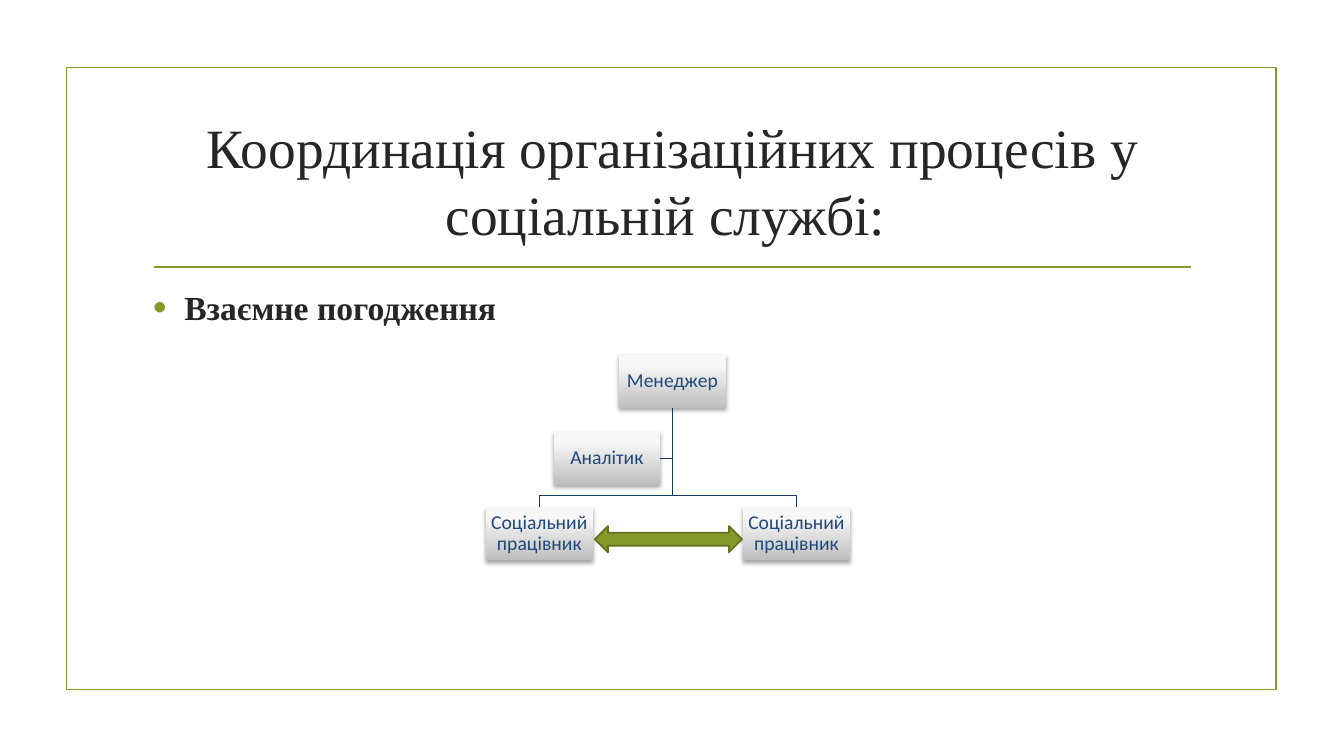
from lxml.etree import SubElement
from pptx import Presentation
from pptx.dml.color import RGBColor
from pptx.enum.shapes import MSO_CONNECTOR, MSO_SHAPE
from pptx.enum.text import MSO_ANCHOR, PP_ALIGN
from pptx.oxml import parse_xml
from pptx.oxml.ns import nsdecls, qn
from pptx.util import Inches, Pt

GREEN, NAVY, DARK = "83992A", "193A64", "262626"
SERIF = "Times New Roman"


def paint(color, code):
    color.rgb = RGBColor.from_string(code)


def write(par, text, size, face, code, bold=False):
    run = par.add_run()
    run.text = text
    run.font.size, run.font.name, run.font.bold = Pt(size), face, bold
    paint(run.font.color, code)


deck = Presentation()
deck.slide_width, deck.slide_height = Inches(13.33), Inches(7.5)
slide = deck.slides.add_slide(deck.slide_layouts[6])
shapes = slide.shapes

# Frame and rule under the title
frame = shapes.add_shape(MSO_SHAPE.RECTANGLE, Inches(0.66), Inches(0.67),
                         Inches(12), Inches(6.17))
frame.shadow.inherit = False
frame.fill.background()
rule = shapes.add_connector(MSO_CONNECTOR.STRAIGHT, Inches(1.53), Inches(2.65),
                            Inches(11.81), Inches(2.65))
SubElement(rule._element.spPr, qn("a:effectLst"))
for item in (frame, rule):
    paint(item.line.color, GREEN)
    item.line.width = Pt(1.25)

# Title
title = shapes.add_textbox(Inches(1.42), Inches(1.07), Inches(10.5), Inches(1.43))
title.text_frame.word_wrap = True
title.text_frame.vertical_anchor = MSO_ANCHOR.MIDDLE
par = title.text_frame.paragraphs[0]
par.alignment = PP_ALIGN.CENTER
write(par, "Координація організаційних процесів у соціальній службі: ", 39.6, SERIF, DARK)

# Bullet
body = shapes.add_textbox(Inches(1.42), Inches(2.8), Inches(10.5), Inches(3.63))
body.text_frame.word_wrap = True
par = body.text_frame.paragraphs[0]
props = par._p.get_or_add_pPr()
props.set("marL", str(Inches(0.31)))
props.set("indent", str(-Inches(0.31)))
tint = SubElement(props, qn("a:buClr"))
SubElement(tint, qn("a:srgbClr"), val=GREEN)
SubElement(props, qn("a:buSzPct"), val="115000")
SubElement(props, qn("a:buFont"), typeface="Arial")
SubElement(props, qn("a:buChar"), char="•")
par.space_after = Pt(6)
write(par, "Взаємне погодження", 24, SERIF, DARK, True)

# Chart grid: box size, axis of the tree and row tops
WIDE, HIGH, AXIS = 1.06, 0.53, 6.67
TOP, MID, LOW = 3.52, 4.28, 5.03
LEFT, RIGHT = 5.35, 7.9
BASE, FORK = TOP + HIGH, 4.92

# Branches of the tree
side = MID + HIGH / 2
for bends in ([(AXIS, side), (AXIS - 0.12, side)],
              [(AXIS, FORK), (RIGHT, FORK), (RIGHT, LOW)],
              [(AXIS, FORK), (LEFT, FORK), (LEFT, LOW)]):
    path = shapes.build_freeform(Inches(AXIS), Inches(BASE))
    path.add_line_segments([(Inches(x), Inches(y)) for x, y in bends], close=False)
    branch = path.convert_to_shape()
    branch.shadow.inherit = False
    branch.fill.background()
    paint(branch.line.color, NAVY)
    branch.line.width = Pt(0.75)

# Boxes, each placed by its centre and top
for mid, top, text in ((AXIS, TOP, "Менеджер"),
                       (LEFT, LOW, "Соціальний працівник"),
                       (RIGHT, LOW, "Соціальний працівник"),
                       (6.02, MID, "Аналітик")):
    box = shapes.add_shape(MSO_SHAPE.RECTANGLE, Inches(mid - WIDE / 2), Inches(top),
                           Inches(WIDE), Inches(HIGH))
    box.line.fill.background()
    box.fill.gradient()
    box.fill.gradient_angle = 90
    for stop, place, code in zip(box.fill.gradient_stops, (0, 0.8), ("BEBEBE", "F7F7F7")):
        stop.position = place
        paint(stop.color, code)
    box._element.spPr.append(parse_xml(
        f'<a:effectLst {nsdecls("a")}><a:outerShdw blurRad="{Pt(3.1)}" dist="{Pt(1.8)}" '
        'dir="5400000" rotWithShape="0"><a:srgbClr val="000000"><a:alpha val="35000"/>'
        '</a:srgbClr></a:outerShdw></a:effectLst>'))
    area = box.text_frame
    area.word_wrap = True
    area.vertical_anchor = MSO_ANCHOR.MIDDLE
    area.margin_left = area.margin_right = Inches(0.01)
    area.margin_top = area.margin_bottom = Inches(0.01)
    par = area.paragraphs[0]
    par.alignment = PP_ALIGN.CENTER
    par.line_spacing = 0.9
    write(par, text, 14, "Calibri", "1F497D")

# Arrow between the two workers
arrow = shapes.add_shape(MSO_SHAPE.LEFT_RIGHT_ARROW, Inches(5.9), Inches(5.22),
                         Inches(1.46), Inches(0.26))
arrow.shadow.inherit = False
arrow.fill.solid()
paint(arrow.fill.fore_color, GREEN)
paint(arrow.line.color, "61711F")
arrow.line.width = Pt(1.25)

deck.save("out.pptx")
